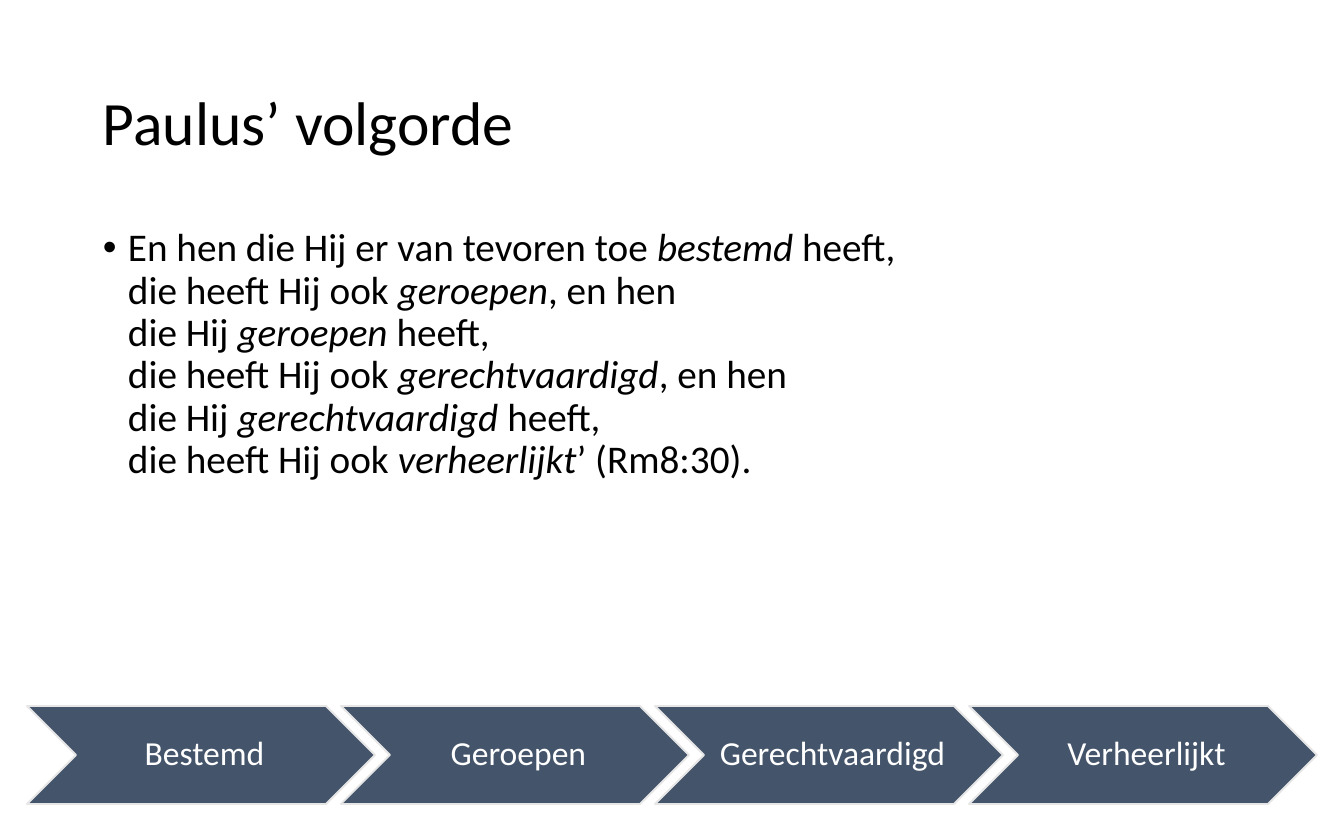
from lxml.etree import SubElement
from pptx import Presentation
from pptx.dml.color import RGBColor
from pptx.enum.shapes import MSO_SHAPE as Shape
from pptx.enum.text import MSO_ANCHOR as Anchor, PP_ALIGN as Align
from pptx.oxml.ns import qn
from pptx.util import Pt

EMU_PER_PX = 914400 / 134.4
COLORS = {"text": "000000", "step": "44546A", "outline": "E7E6E6", "label": "FFFFFF"}
VERSE = [
    ("En hen die Hij er van tevoren toe ", "bestemd", " heeft,"),
    ("die heeft Hij ook ", "geroepen", ", en hen"),
    ("die Hij ", "geroepen", " heeft,"),
    ("die heeft Hij ook ", "gerechtvaardigd", ", en hen"),
    ("die Hij ", "gerechtvaardigd", " heeft,"),
    ("die heeft Hij ook ", "verheerlijkt", "’ (Rm8:30)."),
]
STEPS = ["Bestemd", "Geroepen", "Gerechtvaardigd", "Verheerlijkt"]
STEP_LEFT, STEP_PITCH = 27, 314


def px(*lengths):
    """Turn pixel lengths into a list of EMU values."""
    return [round(length * EMU_PER_PX) for length in lengths]


def color(name):
    """Look up a named colour."""
    return RGBColor.from_string(COLORS[name])


def set_values(target, **values):
    """Set several attributes on one object."""
    for name, value in values.items():
        setattr(target, name, value)


def prepare_frame(box, anchor, insets):
    """Set up wrapping, anchor and insets, and return the first paragraph."""
    left, top, right, bottom = px(*insets)
    frame = box.text_frame
    set_values(frame, word_wrap=True, vertical_anchor=anchor, margin_left=left,
               margin_top=top, margin_right=right, margin_bottom=bottom)
    para = frame.paragraphs[0]
    para.line_spacing = 0.9
    return para


def add_span(para, text, size, color_name="text", italic=False):
    """Add one formatted run to a paragraph."""
    span = para.add_run()
    span.text = text
    set_values(span.font, name="Calibri", size=Pt(size), italic=italic)
    span.font.color.rgb = color(color_name)


def add_title(page, text):
    """Add the slide title."""
    box = page.shapes.add_textbox(*px(93, 44, 1159, 163))
    add_span(prepare_frame(box, Anchor.MIDDLE, (10, 5, 10, 5)), text, 33)


def add_bullet(para, indent):
    """Give a paragraph a bullet with a hanging indent."""
    props = para._p.get_or_add_pPr()
    [width] = px(indent)
    props.set("marL", str(width))
    props.set("indent", str(-width))
    SubElement(props, qn("a:buFont"), typeface="Arial")
    SubElement(props, qn("a:buChar"), char="•")


def add_verse(page, lines):
    """Add the verse as one bullet with an italic word on each line."""
    box = page.shapes.add_textbox(*px(93, 223, 1159, 534))
    para = prepare_frame(box, Anchor.TOP, (10, 5, 10, 5))
    para.space_before = Pt(7.5)
    add_bullet(para, 25)
    for index, (before, key_word, after) in enumerate(lines):
        if index:
            para.add_line_break()
        add_span(para, before, 21)
        add_span(para, key_word, 21, italic=True)
        add_span(para, after, 21)


def add_step(page, index, label):
    """Add one labelled chevron to the process row."""
    left = STEP_LEFT + index * STEP_PITCH
    chevron = page.shapes.add_shape(Shape.CHEVRON, *px(left, 706, 348, 98))
    chevron.shadow.inherit = False
    chevron.fill.solid()
    chevron.fill.fore_color.rgb = color("step")
    chevron.line.color.rgb = color("outline")
    chevron.line.width = Pt(1)
    para = prepare_frame(chevron, Anchor.MIDDLE, (11, 4, 4, 4))
    para.alignment = Align.CENTER
    add_span(para, label, 18, "label")


def main():
    """Build and save the deck."""
    deck = Presentation()
    deck.slide_width, deck.slide_height = px(1344, 840)
    page = deck.slides.add_slide(deck.slide_layouts[6])
    add_title(page, "Paulus’ volgorde")
    add_verse(page, VERSE)
    for index, label in enumerate(STEPS):
        add_step(page, index, label)
    deck.save("out.pptx")


if __name__ == "__main__":
    main()
